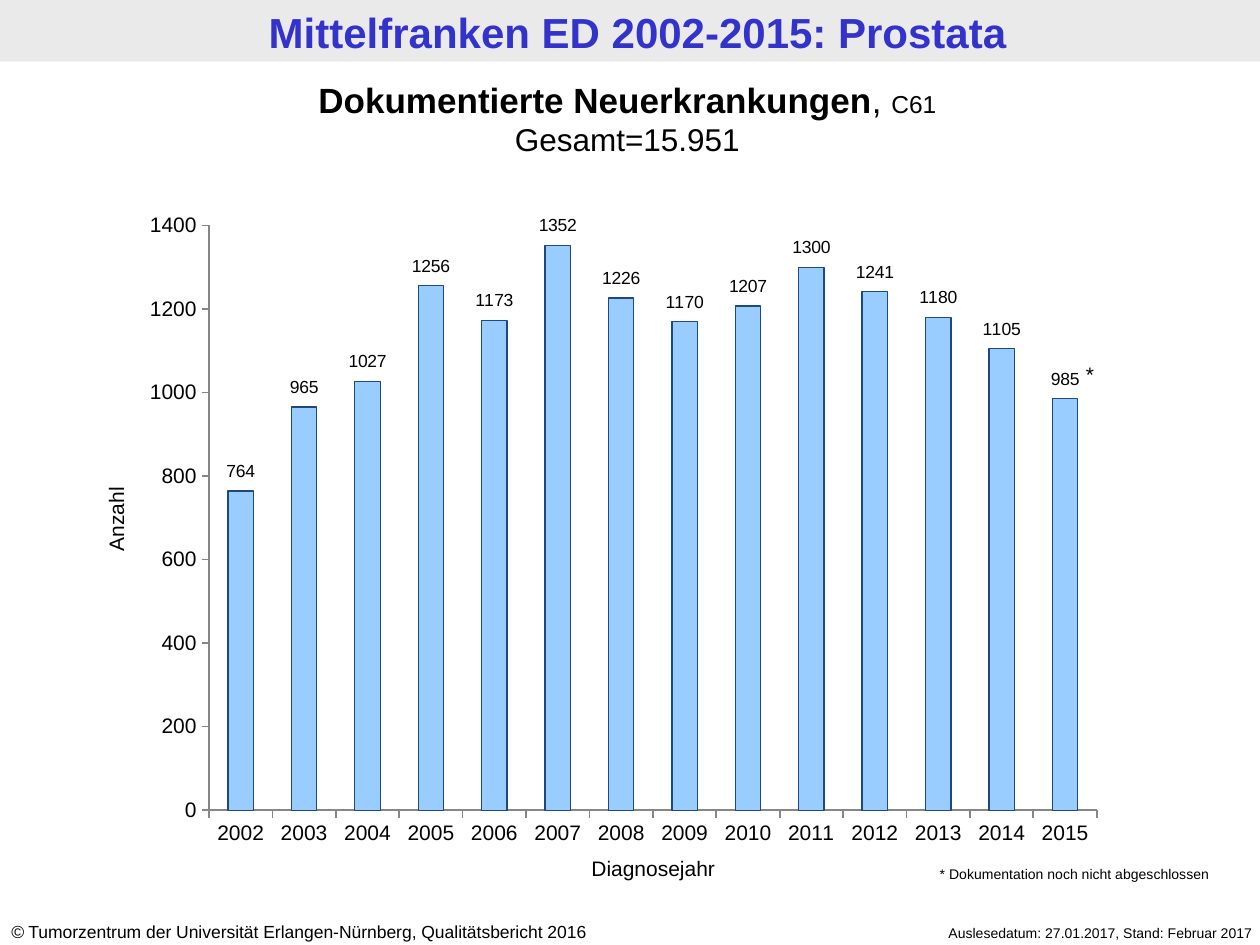
from lxml import etree
from pptx import Presentation
from pptx.chart.data import CategoryChartData
from pptx.dml.color import RGBColor
from pptx.enum import chart as ch, shapes, text
from pptx.oxml.ns import qn
from pptx.util import Inches, Pt

BLACK, BAND, TITLE_BLUE = "000000", "EAEAEA", "3333CC"
BAR_FILL, BAR_LINE, AXIS_GREY = "99CCFF", "1F497D", "868686"
LEFT, CENTER, RIGHT = text.PP_ALIGN.LEFT, text.PP_ALIGN.CENTER, text.PP_ALIGN.RIGHT

HEADING = "Mittelfranken ED 2002-2015: Prostata"
CASES = [764, 965, 1027, 1256, 1173, 1352, 1226, 1170, 1207, 1300, 1241, 1180, 1105, 985]
YEARS = [str(2002 + i) for i in range(len(CASES))]
AXIS_MAX, AXIS_STEP = 1400, 200
PLOT = {"x": 0.066, "y": 0.029, "w": 0.914, "h": 0.903}
LABEL_GAP = 0.03  # bar top to label centre, as a share of the chart height
NO_LEADER_LINES = (
    '<c:extLst xmlns:c="http://schemas.openxmlformats.org/drawingml/2006/chart">'
    '<c:ext uri="{CE6537A1-D6FC-4f65-9D91-7224C49458BB}"'
    ' xmlns:c15="http://schemas.microsoft.com/office/drawing/2012/chart">'
    '<c15:showLeaderLines val="0"/></c:ext></c:extLst>')

# box, alignment, rotation, paragraphs of (text, format) runs
TEXTS = [
    ((-0.01, 7.26, 5.24, 0.27), LEFT, 0, [[
        ("©", {"size": 10, "italic": True}),
        (" Tumorzentrum der Universität Erlangen-Nürnberg, Qualitätsbericht 2016", {"size": 10})]]),
    ((6.65, 7.29, 3.39, 0.24), RIGHT, 0,
     [[("Auslesedatum: 27.01.2017, Stand: Februar 2017", {"size": 8})]]),
    ((-0.04, 0.57, 10.04, 0.74), CENTER, 0, [
        [("Dokumentierte Neuerkrankungen", {"size": 20, "bold": True}),
         (", ", {"size": 20}), ("C61", {"size": 14})],
        [("Gesamt=15.951", {"size": 18})]]),
    ((4.06, 6.74, 2.25, 0.3), CENTER, 0, [[("Diagnosejahr", {"size": 12})]]),
    ((0.31, 3.97, 1.22, 0.3), CENTER, 270, [[("Anzahl", {"size": 12})]]),
    ((8.39, 2.82, 0.39, 0.3), RIGHT, 0, [[("*", {"size": 12})]]),
    ((7.36, 6.82, 2.48, 0.24), LEFT, 0,
     [[("* Dokumentation noch nicht abgeschlossen", {"size": 8})]]),
]


def rgb(value):
    return RGBColor.from_string(value)


def set_font(font, size, color=BLACK, **styles):
    font.color.rgb = rgb(color)
    for name, value in {"name": "Arial", "size": Pt(size), **styles}.items():
        setattr(font, name, value)


def place(shape, box):
    for name, value in zip(("left", "top", "width", "height"), box):
        setattr(shape, name, Inches(value))


def manual_layout(**values):
    layout = etree.Element(qn("c:layout"))
    manual = etree.SubElement(layout, qn("c:manualLayout"))
    for tag, value in values.items():
        etree.SubElement(manual, qn(f"c:{tag}")).set("val", str(value))
    return layout


def add_heading(slide):
    band = slide.shapes.add_shape(shapes.MSO_SHAPE.RECTANGLE, 0, 0, Inches(10), Inches(0.49))
    band.shadow.inherit = False
    band.fill.solid()
    band.fill.fore_color.rgb = rgb(BAND)
    band.line.fill.background()
    title = slide.shapes.title
    title.element.addprevious(band.element)
    place(title, (0.06, 0.01, 10, 0.49))
    frame = title.text_frame
    frame.text = HEADING
    frame.auto_size = text.MSO_AUTO_SIZE.NONE
    frame.paragraphs[0].alignment = CENTER
    set_font(frame.paragraphs[0].runs[0].font, 24, TITLE_BLUE, bold=True)


def add_text(slide, box, alignment, rotation, paragraphs):
    shape = slide.shapes.add_textbox(*map(Inches, box))
    shape.rotation = rotation
    frame = shape.text_frame
    frame.word_wrap = True
    for i, runs in enumerate(paragraphs):
        paragraph = frame.add_paragraph() if i else frame.paragraphs[0]
        paragraph.alignment = alignment
        for words, styles in runs:
            run = paragraph.add_run()
            run.text = words
            set_font(run.font, **styles)


def lift_labels(chart):
    """Move each label from the middle of its bar to above it, without leader lines."""
    series = chart.plots[0].series[0]
    for i in range(len(CASES)):
        label = series.points[i].data_label
        label.position = ch.XL_LABEL_POSITION.CENTER
        set_font(label.font, 10)
    for index in chart.element.findall(".//" + qn("c:dLbl") + "/" + qn("c:idx")):
        half_bar = CASES[int(index.get("val"))] / AXIS_MAX * PLOT["h"] / 2
        index.addnext(manual_layout(x=0, y=round(-half_bar - LABEL_GAP, 4)))
    labels = chart.element.find(".//" + qn("c:dLbls"))
    for leader in labels.findall(qn("c:showLeaderLines")):
        leader.set("val", "0")
    labels.append(etree.fromstring(NO_LEADER_LINES))


def add_case_chart(slide):
    data = CategoryChartData()
    data.categories = YEARS
    data.add_series("Series 1", CASES)
    box = map(Inches, (1.15, 1.64, 7.71, 5.14))
    chart = slide.shapes.add_chart(ch.XL_CHART_TYPE.COLUMN_STACKED, *box, data).chart
    chart.has_legend = chart.has_title = False
    set_font(chart.font, 12)
    area = chart.element.find(".//" + qn("c:plotArea"))
    for old in area.findall(qn("c:layout")):
        area.remove(old)
    area.insert(0, manual_layout(layoutTarget="inner", xMode="edge", yMode="edge", **PLOT))

    values = chart.value_axis
    values.minimum_scale, values.maximum_scale = 0, AXIS_MAX
    values.major_unit = AXIS_STEP
    values.has_major_gridlines = False
    for axis in (values, chart.category_axis):
        axis.major_tick_mark = ch.XL_TICK_MARK.OUTSIDE
        axis.format.line.color.rgb = rgb(AXIS_GREY)
        axis.format.line.width = Pt(1)

    plot = chart.plots[0]
    plot.gap_width, plot.overlap, plot.vary_by_categories = 150, 100, False
    series = plot.series[0]
    series.format.fill.solid()
    series.format.fill.fore_color.rgb = rgb(BAR_FILL)
    series.format.line.color.rgb = rgb(BAR_LINE)
    series.format.line.width = Pt(0.75)
    series.data_labels.show_value = True
    set_font(series.data_labels.font, 10)
    lift_labels(chart)


def main():
    prs = Presentation()
    prs.slide_width, prs.slide_height = Inches(10), Inches(7.5)
    slide = prs.slides.add_slide(prs.slide_layouts[5])
    add_heading(slide)
    add_case_chart(slide)
    for entry in TEXTS:
        add_text(slide, *entry)
    prs.save("out.pptx")


if __name__ == "__main__":
    main()
